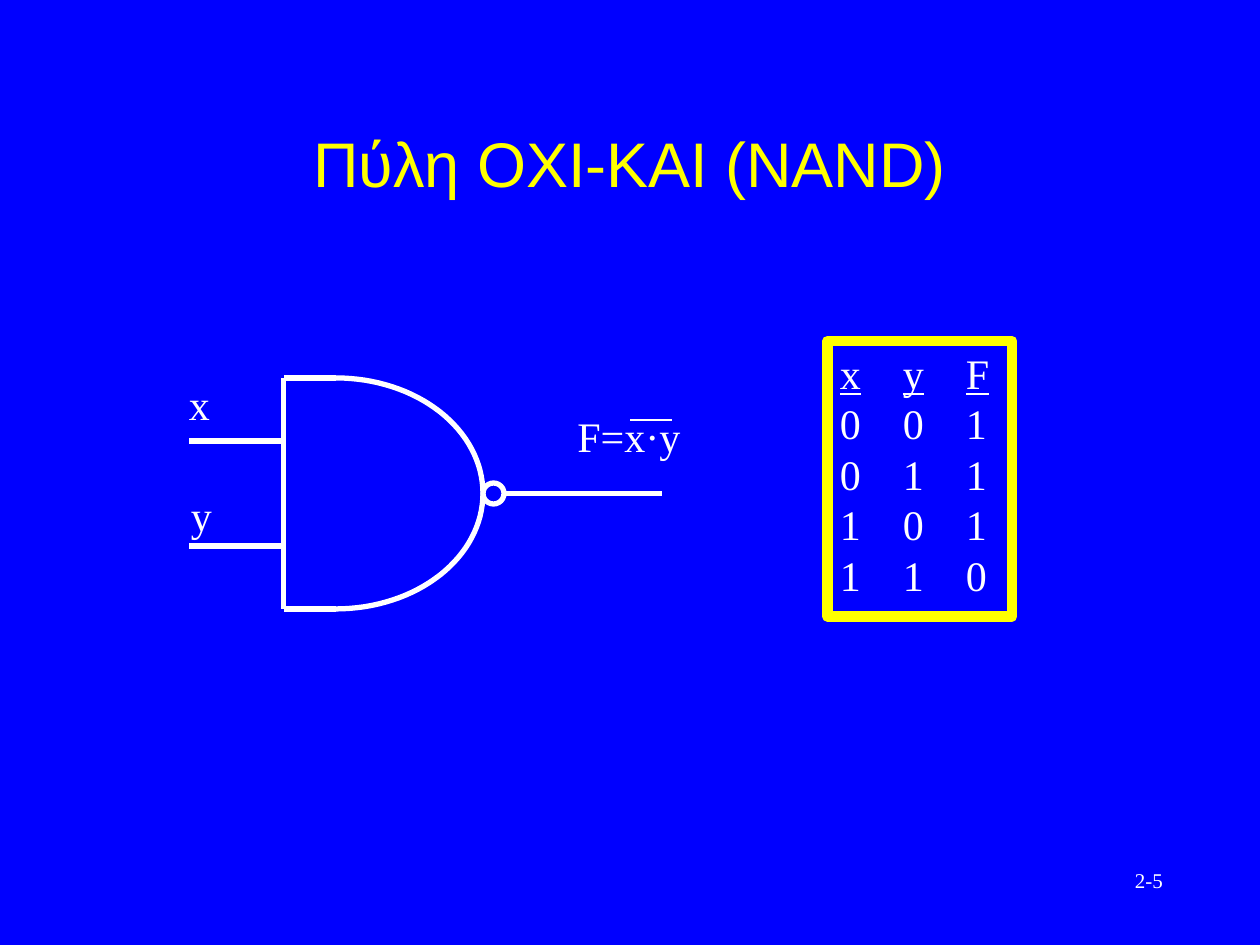
from math import cos, pi, sin

from lxml.etree import SubElement
from pptx import Presentation
from pptx.dml.color import RGBColor
from pptx.enum.shapes import MSO_CONNECTOR, MSO_SHAPE
from pptx.enum.text import MSO_ANCHOR, PP_ALIGN
from pptx.oxml.ns import qn
from pptx.util import Inches, Pt

BLUE = RGBColor(0x00, 0x00, 0xFF)
YELLOW = RGBColor(0xFF, 0xFF, 0x00)
WHITE = RGBColor(0xFF, 0xFF, 0xFF)
SERIF = "Times New Roman"
SANS = "Arial"
STROKE = 3
ARC_STEPS = 32


def grid(cells):
    """Length of a number of grid cells, twelve to the inch."""
    return Inches(cells / 12)


def add_run(paragraph, text, size, font=SERIF, color=WHITE, underline=None):
    run = paragraph.add_run()
    run.text = text
    run.font.size = Pt(size)
    run.font.name = font
    run.font.color.rgb = color
    run.font.underline = underline
    paragraph.line_spacing = Pt(size * 1.2) if font == SERIF else None


def add_label(slide, left, top, width, height, text, size=24):
    label = slide.shapes.add_textbox(*map(grid, (left, top, width, height)))
    label.text_frame.word_wrap = False
    add_run(label.text_frame.paragraphs[0], text, size)


def add_wire(slide, x1, y1, x2, y2, weight=STROKE):
    wire = slide.shapes.add_connector(
        MSO_CONNECTOR.STRAIGHT, *map(grid, (x1, y1, x2, y2)))
    wire.line.color.rgb = WHITE
    wire.line.width = Pt(weight)
    SubElement(wire._element.spPr, qn("a:effectLst"))


def style_outline(shape, color, weight):
    shape.shadow.inherit = False
    shape.fill.background()
    shape.line.color.rgb = color
    shape.line.width = Pt(weight)


def add_quarter_arc(slide, center_x, center_y, radius_x, radius_y):
    """Quarter ellipse; a negative vertical radius curves upwards."""
    angles = [pi / 2 * step / ARC_STEPS for step in range(ARC_STEPS + 1)]
    points = [(grid(center_x + radius_x * sin(a)), grid(center_y + radius_y * cos(a)))
              for a in angles]
    outline = slide.shapes.build_freeform(*points[0])
    outline.add_line_segments(points[1:], close=False)
    style_outline(outline.convert_to_shape(), WHITE, STROKE)


def place_title(slide, left, top, width, height):
    title = slide.shapes.title
    title.left, title.top, title.width, title.height = map(
        grid, (left, top, width, height))
    title.text_frame.vertical_anchor = MSO_ANCHOR.MIDDLE
    heading = title.text_frame.paragraphs[0]
    heading.alignment = PP_ALIGN.CENTER
    add_run(heading, "Πύλη ΟΧΙ-ΚΑΙ (ΝAND)", 36, SANS, YELLOW)


def place_nand_gate(slide, left, top, width, height):
    right, bottom, middle = left + width, top + height, top + height / 2
    shoulder = left + 5
    bubble = 2

    # Body: rounded front, flat edges and back
    for edge, radius in ((top, -height / 2), (bottom, height / 2)):
        add_quarter_arc(slide, shoulder, middle, right - shoulder, radius)
        add_wire(slide, shoulder, edge, left, edge)
    add_wire(slide, left, top, left, bottom)

    # Inputs and output
    for drop in (6, 16):
        add_wire(slide, left, top + drop, left - 9, top + drop)
    add_wire(slide, right + bubble, middle, right + 17, middle)

    # Inversion bubble
    inversion = slide.shapes.add_shape(
        MSO_SHAPE.OVAL, *map(grid, (right, middle - bubble / 2, bubble, bubble)))
    style_outline(inversion, WHITE, STROKE)

    # Signal names, with the negation bar over x·y
    add_label(slide, left - 10.2, top - 0.5, 4.4, 6, "x")
    add_label(slide, left - 10, top + 10, 4.4, 6, "y")
    add_label(slide, right + 7.8, top + 2.5, 12.2, 6, "F=x·y")
    add_wire(slide, right + 14, top + 4, right + 18, top + 4, 0.75)


def place_truth_table(slide, left, top, width, height):
    panel = slide.shapes.add_shape(
        MSO_SHAPE.RECTANGLE, *map(grid, (left, top, width, height)))
    style_outline(panel, YELLOW, 6)
    frame = panel.text_frame
    frame.word_wrap = False
    frame.vertical_anchor = MSO_ANCHOR.TOP

    rows = [("x", "y", "F")]
    rows += [(x, y, 1 - x * y) for x in (0, 1) for y in (0, 1)]
    for index, row in enumerate(rows):
        line = frame.paragraphs[0] if index == 0 else frame.add_paragraph()
        line.alignment = PP_ALIGN.LEFT
        add_run(line, "\t".join(map(str, row)), 24, underline=index == 0)
        stops = SubElement(line._p.get_or_add_pPr(), qn("a:tabLst"))
        for column in (1, 2):
            SubElement(stops, qn("a:tab"), pos=str(grid(6 * column)), algn="l")


def main():
    deck = Presentation()
    deck.slide_width, deck.slide_height = grid(120), grid(90)
    slide = deck.slides.add_slide(deck.slide_layouts[5])
    slide.background.fill.solid()
    slide.background.fill.fore_color.rgb = BLUE

    place_title(slide, 9, 8, 102, 15)
    place_nand_gate(slide, 27, 36, 19, 22)
    place_truth_table(slide, 78.8, 32.5, 17.6, 26.2)
    add_label(slide, 106.9, 82, 6.4, 3.6, "2-5", 12)
    deck.save("out.pptx")


if __name__ == "__main__":
    main()
